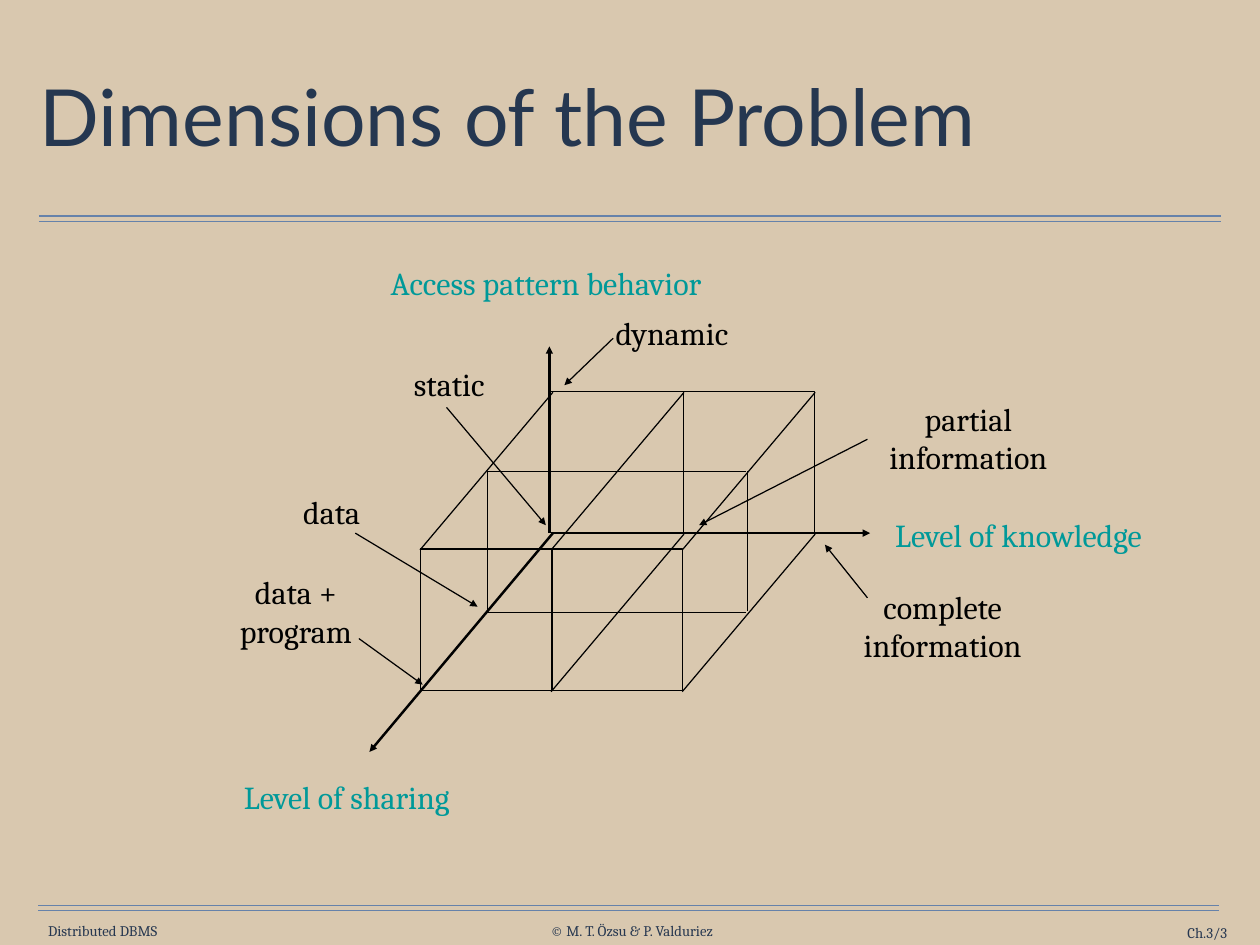
import pptx
import pptx.util
import pptx.dml.color
import pptx.enum.shapes
import pptx.enum.text
import pptx.oxml.ns
import lxml.etree

Inches = pptx.util.Inches
RGBColor = pptx.dml.color.RGBColor
ALIGN = pptx.enum.text.PP_ALIGN
ANCHOR = pptx.enum.text.MSO_ANCHOR
qn = pptx.oxml.ns.qn

SAND = RGBColor(0xD9, 0xC8, 0xAF)
NAVY = RGBColor(0x25, 0x37, 0x50)
FOOTER_NAVY = RGBColor(0x26, 0x37, 0x50)
RULE_BLUE = RGBColor(0x66, 0x82, 0xAA)
TEAL = RGBColor(0x00, 0x99, 0x99)
BLACK = RGBColor(0, 0, 0)

deck = pptx.Presentation()
deck.slide_width, deck.slide_height = Inches(14.22), Inches(10.67)
slide = deck.slides.add_slide(deck.slide_layouts[5])
slide.background.fill.solid()
slide.background.fill.fore_color.rgb = SAND


def write(text, at, box=None, size=26, font="Cambria", color=BLACK, align=ALIGN.CENTER,
          anchor=ANCHOR.TOP, inset=(0.14, 0.07), spacing=None, wrap=False):
    left, top, width, height = (Inches(v) for v in at)
    if box is None:
        box = slide.shapes.add_textbox(left, top, width, height)
    else:
        box.left, box.top, box.width, box.height = left, top, width, height
    frame = box.text_frame
    frame.text = text
    frame.word_wrap = wrap
    frame.auto_size = pptx.enum.text.MSO_AUTO_SIZE.NONE
    frame.vertical_anchor = anchor
    frame.margin_left = frame.margin_right = Inches(inset[0])
    frame.margin_top = frame.margin_bottom = Inches(inset[1])
    for paragraph in frame.paragraphs:
        paragraph.alignment = align
        if spacing:
            paragraph.line_spacing = spacing
        paragraph.font.size = pptx.util.Pt(size)
        paragraph.font.name = font
        paragraph.font.color.rgb = color


def draw_line(x1, y1, x2, y2, color=BLACK, weight=1, arrow=False):
    line = slide.shapes.add_connector(pptx.enum.shapes.MSO_CONNECTOR.STRAIGHT,
                                      Inches(x1), Inches(y1), Inches(x2), Inches(y2))
    line.line.color.rgb = color
    line.line.width = pptx.util.Pt(weight)
    if arrow:
        lxml.etree.SubElement(line.line._get_or_add_ln(), qn("a:tailEnd"), type="triangle")
    lxml.etree.SubElement(line._element.spPr, qn("a:effectLst"))


# Double rules under the title and above the footer
for left, right, top in [(0.44, 13.78, 2.44), (0.43, 13.76, 10.22)]:
    for y in (top, top + 0.06):
        draw_line(left, y, right, y, color=RULE_BLUE)

# Footer
for text, at, align in [
    ("Distributed DBMS", (0.47, 10.41, 1.38, 0.2), ALIGN.CENTER),
    ("© M. T. Özsu & P. Valduriez", (6.09, 10.41, 2.08, 0.2), ALIGN.CENTER),
    ("Ch.3/3", (12.31, 10.43, 1.54, 0.2), ALIGN.RIGHT),
]:
    write(text, at, size=12, color=FOOTER_NAVY, align=align, anchor=ANCHOR.MIDDLE, inset=(0, 0),
          wrap=align == ALIGN.RIGHT)

# Title
write("Dimensions of the Problem", (0.39, 0.49, 13.44, 1.76), box=slide.shapes.title, size=64,
      font="Lato", color=NAVY, align=ALIGN.LEFT, anchor=ANCHOR.MIDDLE, inset=(0.06, 0.06),
      spacing=0.9, wrap=True)

# Axis names
for text, at in [
    ("Level of sharing", (2.51, 8.81, 2.81, 0.46)),
    ("Level of knowledge", (9.8, 5.85, 3.39, 0.46)),
    ("Access pattern behavior", (4.13, 3, 4.07, 0.46)),
]:
    write(text, at, color=TEAL, inset=(0.1, 0.04), spacing=0.85)

# Axes
for axis in [(6.2, 6.02, 6.2, 3.91), (6.22, 6.02, 9.82, 6.02), (6.24, 6.02, 4.17, 8.49)]:
    draw_line(*axis, weight=2, arrow=True)

# Front and back faces of the solid
for face in [
    [(4.74, 6.2), (7.7, 6.2), (7.7, 7.8), (4.74, 7.8)],
    [(6.22, 4.42), (9.19, 4.42), (9.19, 6.02)],
]:
    corners = [(Inches(x), Inches(y)) for x, y in face]
    builder = slide.shapes.build_freeform(*corners[0])
    builder.add_line_segments(corners[1:], close=False)
    outline = builder.convert_to_shape()
    outline.fill.background()
    outline.line.color.rgb = BLACK
    outline.line.width = pptx.util.Pt(1)
    outline.shadow.inherit = False

# Upright edges, middle-plane edges and receding edges
for x, y in [(5.5, 5.32), (8.44, 5.32), (4.75, 6.21), (7.71, 4.43), (6.23, 6.21)]:
    draw_line(x, y, x, y + 1.58)
for y in (5.32, 6.92):
    draw_line(5.5, y, 8.42, y)
for x, y in [(6.24, 4.43), (7.72, 4.43), (9.2, 4.43), (7.72, 6.03), (9.2, 6.03)]:
    draw_line(x, y, x - 1.5, y + 1.78)

# Values along the axes, each with its pointer
for text, at, pointer in [
    ("dynamic", (6.81, 3.47, 1.55, 0.58), (6.92, 3.82, 6.37, 4.35)),
    ("static", (4.53, 4.05, 1.08, 0.58), (5.04, 4.6, 6.16, 5.93)),
    ("partial\ninformation", (9.78, 4.44, 2.3, 1.01), (9.79, 4.96, 7.89, 5.93)),
    ("complete\ninformation", (9.61, 6.56, 2.06, 1.01), (9.79, 6.75, 9.31, 6.15)),
    ("data", (3.28, 5.49, 0.93, 0.58), (4.01, 6.02, 5.39, 6.85)),
    ("data +\nprogram", (2.57, 6.4, 1.54, 1.01), (4.05, 7.21, 4.77, 7.73)),
]:
    write(text, at)
    draw_line(*pointer, arrow=True)

deck.save("out.pptx")
